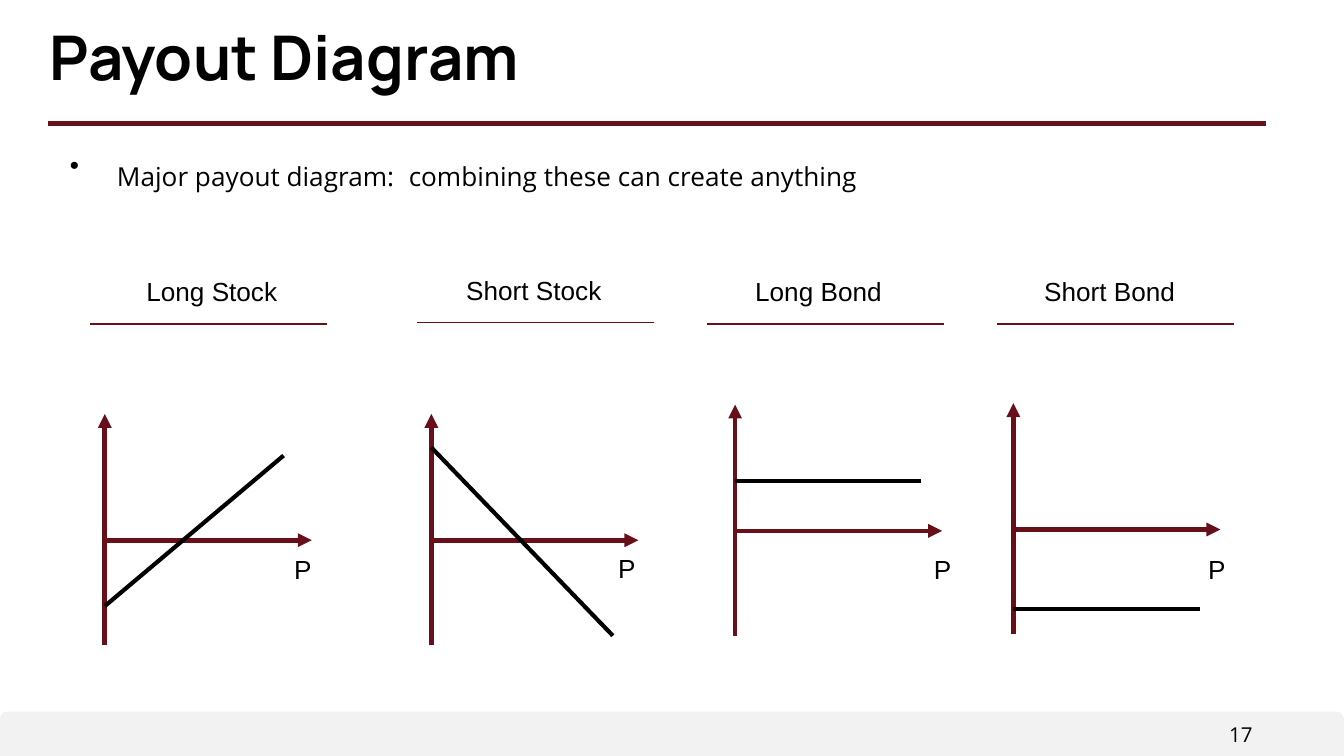
from dataclasses import dataclass

from lxml.etree import SubElement
from pptx import Presentation
from pptx.dml.color import RGBColor
from pptx.enum.shapes import MSO_CONNECTOR, MSO_SHAPE
from pptx.enum.text import MSO_ANCHOR, PP_ALIGN
from pptx.oxml.ns import qn
from pptx.util import Inches, Pt

SLIDE_WIDTH = Inches(10)
SLIDE_HEIGHT = SLIDE_WIDTH * 9 // 16
GRID_COLUMNS = 100
GRID_ROWS = 56.25
MAROON = "671019"
RULE_MAROON = "67121B"
BLACK = "000000"
PALE_GREY = "F2F2F2"
AXIS_WIDTH = 15.4
AXIS_HEIGHT = 17.2
AXIS_BELOW = 7.8
HEADING_WIDTH = 17.65


@dataclass
class Payout:
    name: str
    heading_left: float
    heading_row: float
    name_indent: float
    origin_column: float
    origin_row: float
    price_column: float
    price_row: float
    payoff_start: float
    payoff_end: float
    payoff_width: float


PAYOUTS = [
    Payout("Long Stock", 6.7, 24.1, 3.2, 7.8, 40.2, 20.9, 40.7, 4.9, -6.3, 13.3),
    Payout("Short Stock", 31, 24, 2.7, 32.1, 40.2, 45, 40.6, -6.9, 7.1, 13.5),
    Payout("Long Bond", 52.6, 24.1, 2.6, 54.7, 39.5, 68.5, 40.7, -3.7, -3.7, 13.8),
    Payout("Short Bond", 74.2, 24.1, 2.5, 75.4, 39.4, 88.9, 40.7, 5.9, 5.9, 13.9),
]


def column(count):
    return round(SLIDE_WIDTH * count / GRID_COLUMNS)


def row(count):
    return round(SLIDE_HEIGHT * count / GRID_ROWS)


def color(value):
    return RGBColor.from_string(value)


def place(shape, left, top, width, height):
    shape.left, shape.top = column(left), row(top)
    shape.width, shape.height = column(width), row(height)


def set_margins(text_frame, left, top, right, bottom):
    text_frame.margin_left, text_frame.margin_top = Inches(left), Inches(top)
    text_frame.margin_right, text_frame.margin_bottom = Inches(right), Inches(bottom)


def format_run(run, font_name, size, bold=False):
    run.font.name = font_name
    run.font.size = Pt(size)
    run.font.bold = bold
    run.font.color.rgb = color(BLACK)


def add_line(slide, start, end, line_color, width, arrow=False):
    line = slide.shapes.add_connector(
        MSO_CONNECTOR.STRAIGHT, column(start[0]), row(start[1]), column(end[0]), row(end[1])
    )
    line.line.color.rgb = color(line_color)
    line.line.width = Pt(width)
    properties = line._element.spPr
    if arrow:
        SubElement(properties.find(qn("a:ln")), qn("a:tailEnd"), type="triangle")
    SubElement(properties, qn("a:effectLst"))


def add_text(slide, text, left, top, width, height, font_name="Arial", size=14):
    box = slide.shapes.add_textbox(column(left), row(top), column(width), row(height))
    text_frame = box.text_frame
    text_frame.word_wrap = True
    text_frame.text = text
    set_margins(text_frame, 0.1, 0.05, 0, 0.05)
    format_run(text_frame.paragraphs[0].runs[0], font_name, size)
    return box


def add_title(slide):
    title = slide.shapes.title
    place(title, 3, 1.6, 93.1, 6.8)
    text_frame = title.text_frame
    text_frame.text = "Payout Diagram"
    text_frame.vertical_anchor = MSO_ANCHOR.TOP
    set_margins(text_frame, 0.07, 0.04, 0.07, 0.04)
    paragraph = text_frame.paragraphs[0]
    paragraph.alignment = PP_ALIGN.LEFT
    paragraph.line_spacing = 0.9
    format_run(paragraph.runs[0], "Manrope", 33, True)


def add_bullet(slide):
    box = add_text(slide, "Major payout diagram:", 3, 10, 83.8, 6.8, "Open Sans")
    set_margins(box.text_frame, 0.07, 0.04, 0.07, 0.04)
    paragraph = box.text_frame.paragraphs[0]
    paragraph.line_spacing = 0.9
    properties = paragraph._p.get_or_add_pPr()
    properties.set("marL", str(Inches(0.5)))
    properties.set("indent", str(-Inches(0.35)))
    bullet_color = SubElement(properties, qn("a:buClr"))
    SubElement(bullet_color, qn("a:srgbClr"), val=BLACK)
    SubElement(properties, qn("a:buFont"), typeface="Arial")
    SubElement(properties, qn("a:buChar"), char="•")
    for text, size in ((" ", 29), ("combining these can create anything", 14)):
        run = paragraph.add_run()
        run.text = text
        format_run(run, "Open Sans", size)


def add_footer(slide):
    band = slide.shapes.add_shape(
        MSO_SHAPE.ROUND_2_SAME_RECTANGLE, 0, row(52.95), SLIDE_WIDTH, row(3.3)
    )
    band.shadow.inherit = False
    band.fill.solid()
    band.fill.fore_color.rgb = color(PALE_GREY)
    band.line.fill.background()
    number = add_text(slide, "17", 81.2, 53.3, 12.7, 2.5, "Open Sans", 11)
    set_margins(number.text_frame, 0.07, 0.04, 0.07, 0.04)
    number.text_frame.paragraphs[0].alignment = PP_ALIGN.RIGHT


def add_payout(slide, payout):
    left, heading_row = payout.heading_left, payout.heading_row
    add_line(slide, (left, heading_row), (left + HEADING_WIDTH, heading_row), MAROON, 0.75)
    add_text(slide, payout.name, left + payout.name_indent, heading_row - 4.1, 12.2, 3.4)

    x, y = payout.origin_column, payout.origin_row
    bottom = y + AXIS_BELOW
    add_line(slide, (x, y), (x + AXIS_WIDTH, y), MAROON, 2.5, True)
    add_line(slide, (x, bottom), (x, bottom - AXIS_HEIGHT), MAROON, 2.5, True)
    add_line(
        slide,
        (x, y + payout.payoff_start),
        (x + payout.payoff_width, y + payout.payoff_end),
        BLACK,
        2.25,
    )
    add_text(slide, "P", payout.price_column, payout.price_row, 2.5, 3.4)


def main():
    presentation = Presentation()
    presentation.slide_width = SLIDE_WIDTH
    presentation.slide_height = SLIDE_HEIGHT
    slide = presentation.slides.add_slide(presentation.slide_layouts[5])
    add_footer(slide)
    add_line(slide, (3.6, 9.2), (94.2, 9.2), RULE_MAROON, 2.5)
    add_title(slide)
    add_bullet(slide)
    for payout in PAYOUTS:
        add_payout(slide, payout)
    presentation.save("out.pptx")


if __name__ == "__main__":
    main()
